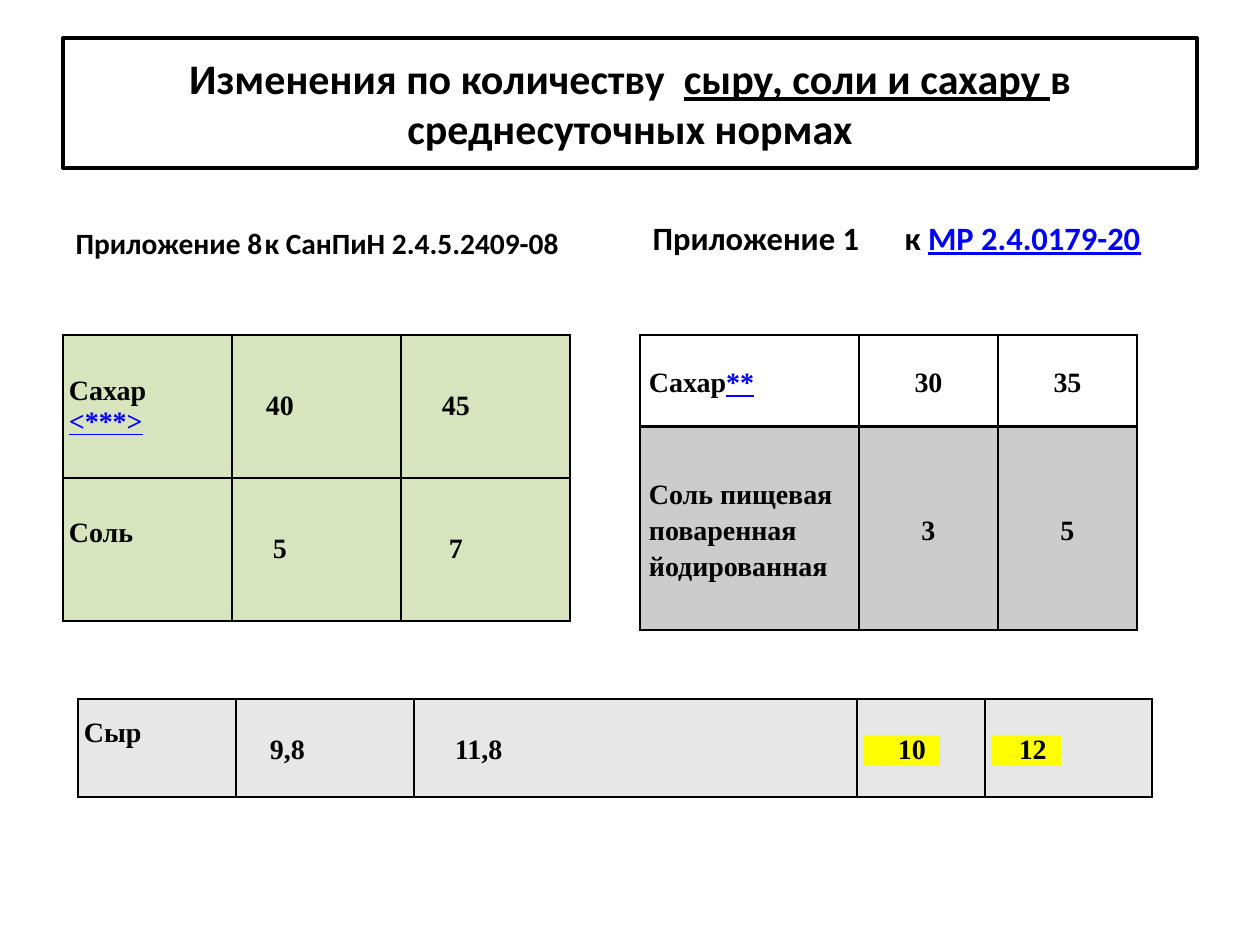
from dataclasses import dataclass

from pptx import Presentation
from pptx import util as u
from pptx.dml.color import RGBColor
from pptx.enum import text as t
from pptx.oxml import ns, xmlchemy

PX = 914400 / 126


@dataclass(frozen=True)
class Theme:
    ink: str = "000000"
    link: str = "0000FF"
    marker: str = "FFFF00"
    green: str = "D7E4BD"
    pale: str = "E7E7E7"
    heading_font: str = "Calibri"
    table_font: str = "Times New Roman"
    title_size: float = 24
    old_size: float = 16.8
    new_size: float = 18.6
    cell_size: float = 16


THEME = Theme()
LINK = {"color": THEME.link, "underline": True}
MARKED = {"highlight": THEME.marker}


def px(value):
    return u.Emu(round(value * PX))


def child(parent, tag, **attributes):
    element = xmlchemy.OxmlElement(tag)
    for key, value in attributes.items():
        element.set(key, str(value))
    parent.append(element)
    return element


def write(frame, runs, font=THEME.table_font, size=THEME.cell_size,
          align=t.PP_ALIGN.LEFT, spacing=None, indent=0, tab=None):
    """Write one bold paragraph; runs are plain strings or (string, format)."""
    paragraph = frame.paragraphs[0]
    paragraph.alignment = align
    if spacing:
        paragraph.line_spacing = spacing
    properties = paragraph._p.get_or_add_pPr()
    if indent:
        properties.set("marL", str(px(indent)))
    if tab:
        child(child(properties, "a:tabLst"), "a:tab", pos=px(tab), algn="l")
    for part in runs:
        words, look = (part, {}) if isinstance(part, str) else part
        run = paragraph.add_run()
        run.text = words
        run.font.name, run.font.size, run.font.bold = font, u.Pt(size), True
        run.font.underline = look.get("underline")
        run.font.color.rgb = RGBColor.from_string(look.get("color", THEME.ink))
        if "highlight" in look:
            mark = xmlchemy.OxmlElement("a:highlight")
            child(mark, "a:srgbClr", val=look["highlight"])
            run._r.rPr.find(ns.qn("a:solidFill")).addnext(mark)


def place(shape, box):
    shape.left, shape.top, shape.width, shape.height = map(px, box)


def draw_title(title, box):
    place(title, box)
    title.line.color.rgb = RGBColor.from_string(THEME.ink)
    title.line.width = u.Pt(2.25)
    frame = title.text_frame
    frame.auto_size = t.MSO_AUTO_SIZE.NONE
    frame.vertical_anchor = t.MSO_ANCHOR.MIDDLE
    write(frame, ["Изменения по количеству  ",
                  ("сыру, соли и сахару ", {"underline": True}),
                  "в среднесуточных нормах"],
          font=THEME.heading_font, size=THEME.title_size,
          align=t.PP_ALIGN.CENTER)


def draw_heading(heading, box, runs, size, tab, bottom):
    place(heading, box)
    frame = heading.text_frame
    frame.auto_size = t.MSO_AUTO_SIZE.NONE
    frame.vertical_anchor = t.MSO_ANCHOR.BOTTOM
    frame.margin_bottom = px(bottom)
    write(frame, runs, font=THEME.heading_font, size=size, tab=tab)


def paint_cell(cell, fill, alpha, borders):
    if fill:
        cell.fill.solid()
        cell.fill.fore_color.rgb = RGBColor.from_string(fill)
    else:
        cell.fill.background()
    properties = cell._tc.get_or_add_tcPr()
    if alpha:
        color = properties.find(".//" + ns.qn("a:srgbClr"))
        child(color, "a:alpha", val=alpha * 1000)
    for order, (side, width) in enumerate(zip("LRTB", borders)):
        line = xmlchemy.OxmlElement(f"a:ln{side}")
        line.set("w", str(u.Pt(width)))
        child(child(line, "a:solidFill"), "a:srgbClr", val=THEME.ink)
        properties.insert(order, line)


def draw_table(slide, left, top, columns, heights, rows, inset, spacing=None):
    """Each row is (cells, paint); each cell is (runs, format)."""
    table = slide.shapes.add_table(
        len(heights), len(columns), px(left), px(top),
        px(sum(columns)), px(sum(heights))).table
    table.first_row = table.horz_banding = False
    for column, width in zip(table.columns, columns):
        column.width = px(width)
    for row, height, (cells, paint) in zip(table.rows, heights, rows):
        row.height = px(height)
        for cell, (runs, look) in zip(row.cells, cells):
            look = dict(look)
            cell.vertical_anchor = t.MSO_ANCHOR.MIDDLE
            cell.margin_left = px(inset)
            cell.margin_right = px(look.pop("right", inset))
            cell.margin_top = 0
            cell.margin_bottom = px(look.pop("bottom", 0))
            write(cell.text_frame, runs, spacing=spacing, **look)
            paint_cell(cell, **paint)


def draw_old_norms(slide, left, top):
    paint = {"fill": THEME.green, "alpha": None, "borders": (1, 1, 1, 1)}
    sugar = [(["Сахар ", ("<***>", LINK)], {"right": 14}),
             (["40"], {"indent": 28}), (["45"], {"indent": 35})]
    salt = [(["Соль"], {"bottom": 32}),
            (["5"], {"indent": 35}), (["7"], {"indent": 42})]
    draw_table(slide, left, top, [169] * 3, [143] * 2,
               [(sugar, paint), (salt, paint)], inset=6)


def draw_new_norms(slide, left, top):
    center = {"align": t.PP_ALIGN.CENTER}
    sugar = [(["Сахар", ("**", LINK)], {}), (["30"], center), (["35"], center)]
    salt = [(["Соль пищевая поваренная йодированная"], {}),
            (["3"], center), (["5"], center)]
    plain = {"fill": None, "alpha": None, "borders": (1, 1, 1, 2)}
    shaded = {"fill": THEME.ink, "alpha": 20, "borders": (1, 1, 2, 1)}
    draw_table(slide, left, top, [219, 139, 139], [92, 203],
               [(sugar, plain), (salt, shaded)], inset=9, spacing=1.15)


def draw_cheese(slide, left, top):
    paint = {"fill": THEME.pale, "alpha": None, "borders": (1, 1, 1, 1)}
    cheese = [(["Сыр"], {"bottom": 34}),
              (["9,8"], {"indent": 28}), (["11,8"], {"indent": 35}),
              # The marker colour also covers the gaps around these numbers
              ([("     10  ", MARKED)], {}), ([("    12  ", MARKED)], {})]
    draw_table(slide, left, top, [158, 178, 443, 128, 167], [98],
               [(cheese, paint)], inset=6, spacing=1.15)


def main():
    deck = Presentation()
    deck.slide_width, deck.slide_height = u.Inches(10), u.Inches(7.5)
    slide = deck.slides.add_slide(deck.slide_layouts.get_by_name("Comparison"))
    holders = {p.placeholder_format.idx: p for p in slide.placeholders}
    left, right = 63, 640

    # Title and the headings of the two documents
    draw_title(holders[0], (left, 38, 1134, 130))
    draw_heading(holders[1], (left, 212, 557, 88),
                 ["Приложение 8\tк СанПиН 2.4.5.2409-08"],
                 THEME.old_size, tab=219, bottom=40)
    draw_heading(holders[3], (right, 212, 557, 88),
                 ["Приложение 1\tк ", ("МР 2.4.0179-20", LINK)],
                 THEME.new_size, tab=265, bottom=43)

    # Norms side by side, with cheese below
    draw_old_norms(slide, left, 335)
    draw_new_norms(slide, right, 335)
    draw_cheese(slide, 78, 699)

    # Unused parts of the layout
    for index in set(holders) - {0, 1, 3}:
        element = holders[index]._element
        element.getparent().remove(element)
    deck.save("out.pptx")


if __name__ == "__main__":
    main()
